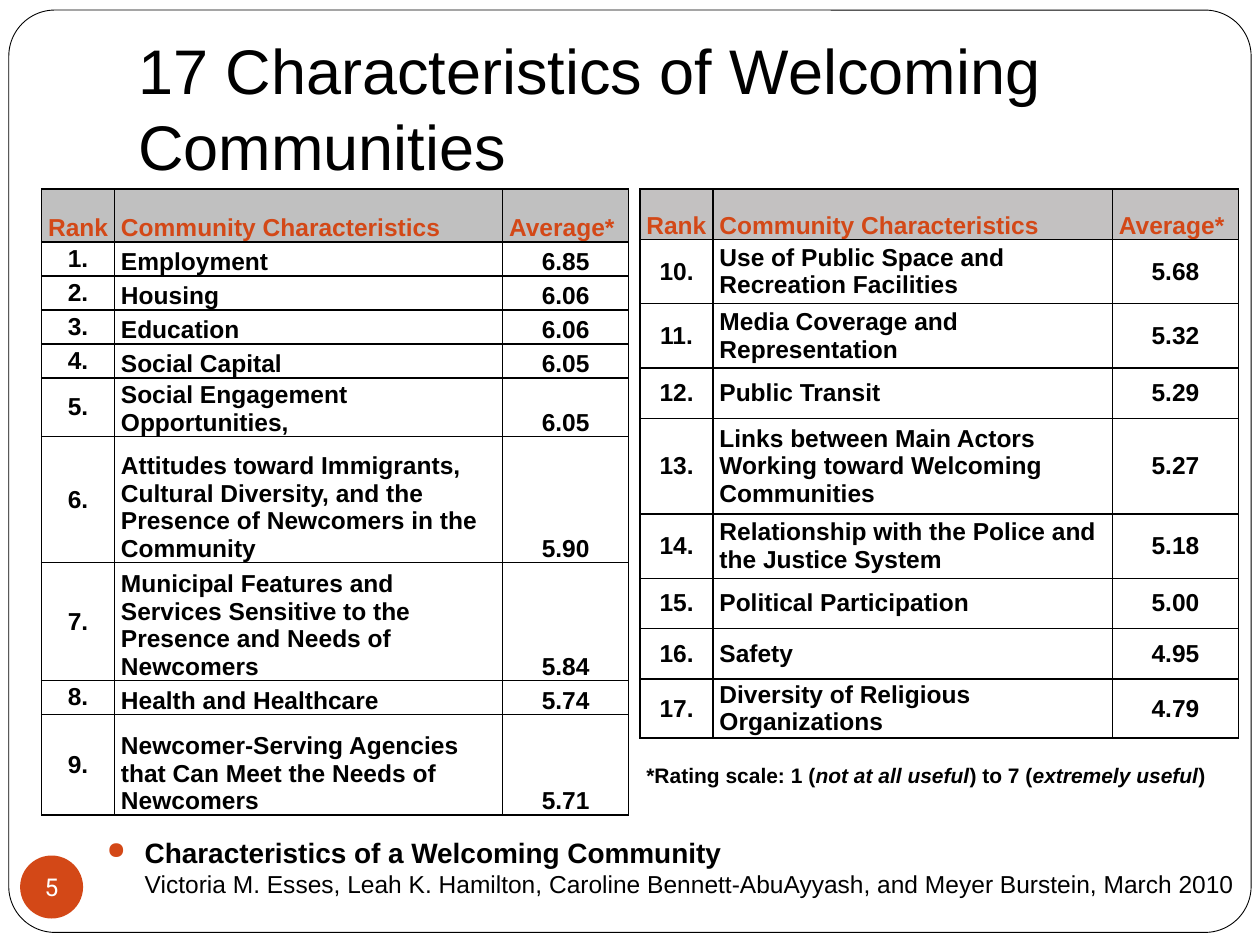
from lxml import etree
from pptx import Presentation
from pptx.dml.color import RGBColor as RGB
from pptx.enum.shapes import MSO_SHAPE as SHAPE
from pptx.enum.text import MSO_ANCHOR as ANCHOR, PP_ALIGN as ALIGN
from pptx.oxml.ns import qn
from pptx.util import Inches, Pt

THEME = {
    "font": "Arial", "number_font": "Roboto",
    "ink": "000000", "accent": "D34817", "paper": "FFFFFF",
    "title": 36, "source": 16, "body": 14, "note": 12,
}
TITLE = "17 Characteristics of Welcoming Communities"
SOURCE = ("Characteristics of a Welcoming Community",
          "Victoria M. Esses, Leah K. Hamilton, Caroline Bennett-AbuAyyash, "
          "and Meyer Burstein, March 2010")
NUMBER = "5"
HEADER = ("Rank", "Community Characteristics", "Average*")
NOTE = [("*Rating scale: 1 (", False), ("not at all useful", True),
        (") to 7 (", False), ("extremely useful", True), (")", False)]

TABLES = [
    {
        "at": (5.08, 1.5), "cols": (0.58, 3.17, 1), "first": 10,
        "head_fill": "C3C1C1", "head_align": ALIGN.LEFT,
        "anchor": ANCHOR.MIDDLE, "head_height": 0.4, "note_height": 0.4,
        "rows": [
            ("Use of Public Space and Recreation Facilities", "5.68", 0.51),
            ("Media Coverage and Representation", "5.32", 0.51),
            ("Public Transit", "5.29", 0.4),
            ("Links between Main Actors Working toward Welcoming Communities", "5.27", 0.76),
            ("Relationship with the Police and the Justice System", "5.18", 0.51),
            ("Political Participation", "5.00", 0.4),
            ("Safety", "4.95", 0.4),
            ("Diversity of Religious Organizations", "4.79", 0.4),
        ],
    },
    {
        "at": (0.33, 1.5), "cols": (0.58, 3.08, 1), "first": 1,
        "head_fill": "C0C0C0", "head_align": ALIGN.CENTER,
        "anchor": ANCHOR.BOTTOM, "head_height": 0.42, "note_height": None,
        "rows": [
            ("Employment", "6.85", 0.27),
            ("Housing", "6.06", 0.27),
            ("Education", "6.06", 0.27),
            ("Social Capital", "6.05", 0.27),
            ("Social Engagement Opportunities,", "6.05", 0.27),
            ("Attitudes toward Immigrants, Cultural Diversity, and the "
             "Presence of Newcomers in the Community", "5.90", 1),
            ("Municipal Features and Services Sensitive to the "
             "Presence and Needs of Newcomers", "5.84", 0.8),
            ("Health and Healthcare", "5.74", 0.27),
            ("Newcomer-Serving Agencies that Can Meet the Needs of Newcomers", "5.71", 0.8),
        ],
    },
]


def set_all(obj, **values):
    for name, value in values.items():
        setattr(obj, name, value)


def add_run(p, text, size="body", color="ink", font="font", **style):
    r = p.add_run()
    r.text = text
    set_all(r.font, size=Pt(THEME[size]), name=THEME[font], **style)
    r.font.color.rgb = RGB.from_string(THEME[color])


def add_shape(s, kind, at, fill):
    sp = s.shapes.add_shape(kind, *map(Inches, at))
    sp.shadow.inherit = False
    sp.fill.solid()
    sp.fill.fore_color.rgb = RGB.from_string(THEME[fill])
    return sp


def add_text(s, at, **frame):
    tf = s.shapes.add_textbox(*map(Inches, at)).text_frame
    set_all(tf, word_wrap=True, **frame)
    return tf.paragraphs[0]


def add_bullet(p):
    pPr = p._p.get_or_add_pPr()
    set_all_xml = {"marL": Inches(0.3), "indent": -Inches(0.3)}
    for name, value in set_all_xml.items():
        pPr.set(name, str(int(value)))
    color = etree.SubElement(pPr, qn("a:buClr"))
    etree.SubElement(color, qn("a:srgbClr"), val=THEME["accent"])
    etree.SubElement(pPr, qn("a:buSzPct"), val="85000")
    etree.SubElement(pPr, qn("a:buChar"), char="●")


def set_borders(cell, sides):
    tcPr = cell._tc.get_or_add_tcPr()
    for i, side in enumerate("LRTB"):
        ln = etree.Element(qn("a:ln" + side), w=str(Pt(1)))
        if side in sides:
            fill = etree.SubElement(ln, qn("a:solidFill"))
            etree.SubElement(fill, qn("a:srgbClr"), val=THEME["ink"])
        else:
            etree.SubElement(ln, qn("a:noFill"))
        tcPr.insert(i, ln)


def format_cell(cell, anchor, align=ALIGN.LEFT, fill=None, sides="LRTB"):
    set_all(cell, vertical_anchor=anchor, margin_left=Inches(0.05),
            margin_right=Inches(0.05), margin_top=0, margin_bottom=0)
    if fill:
        cell.fill.solid()
        cell.fill.fore_color.rgb = RGB.from_string(fill)
    else:
        cell.fill.background()
    set_borders(cell, sides)
    p = cell.text_frame.paragraphs[0]
    p.alignment = align
    return p


def add_ranking(s, data):
    heights = [data["head_height"]] + [row[2] for row in data["rows"]]
    if data["note_height"]:
        heights.append(data["note_height"])
    cols = data["cols"]
    box = (*data["at"], sum(cols), sum(heights))
    table = s.shapes.add_table(len(heights), len(cols), *map(Inches, box)).table
    set_all(table, first_row=False, horz_banding=False)
    for col, width in zip(table.columns, cols):
        col.width = Inches(width)
    for row, height in zip(table.rows, heights):
        row.height = Inches(height)

    head_aligns = (data["head_align"], ALIGN.LEFT, ALIGN.LEFT)
    for c, (text, align) in enumerate(zip(HEADER, head_aligns)):
        p = format_cell(table.cell(0, c), ANCHOR.BOTTOM, align, data["head_fill"])
        add_run(p, text, color="accent", bold=True)

    anchors = (ANCHOR.MIDDLE, data["anchor"], data["anchor"])
    aligns = (ALIGN.CENTER, ALIGN.LEFT, ALIGN.CENTER)
    for i, (name, average, _) in enumerate(data["rows"]):
        texts = (f"{data['first'] + i}.", name, average)
        for c, (text, anchor, align) in enumerate(zip(texts, anchors, aligns)):
            p = format_cell(table.cell(i + 1, c), anchor, align)
            add_run(p, text, bold=True)

    if data["note_height"]:
        last = len(heights) - 1
        for c in range(len(cols)):
            p = format_cell(table.cell(last, c), ANCHOR.BOTTOM, sides="T")
            if c == 0:
                for text, italic in NOTE:
                    add_run(p, text, "note", bold=True, italic=italic)
        table.cell(last, 0).merge(table.cell(last, len(cols) - 1))


def main():
    prs = Presentation()
    set_all(prs, slide_width=Inches(10), slide_height=Inches(7.5))
    s = prs.slides.add_slide(prs.slide_layouts[6])

    frame = add_shape(s, SHAPE.ROUNDED_RECTANGLE, (0.07, 0.08, 9.86, 7.32), "paper")
    frame.adjustments[0] = 0.05
    frame.line.color.rgb = RGB.from_string(THEME["ink"])
    frame.line.width = Pt(0.5)

    p = add_text(s, (1, 0.3, 8.5, 1.25), vertical_anchor=ANCHOR.BOTTOM,
                 margin_bottom=Inches(0.1))
    add_run(p, TITLE, "title")

    p = add_text(s, (0.75, 6.58, 9.25, 0.75))
    p.space_before = Pt(5.8)
    add_bullet(p)
    add_run(p, SOURCE[0], "source", bold=True)
    p.add_line_break()
    add_run(p, SOURCE[1])

    for data in TABLES:
        add_ranking(s, data)

    badge = add_shape(s, SHAPE.OVAL, (0.16, 6.79, 0.5, 0.5), "accent")
    badge.line.fill.background()
    tf = badge.text_frame
    set_all(tf, word_wrap=False, vertical_anchor=ANCHOR.MIDDLE,
            margin_left=0, margin_right=0, margin_top=0, margin_bottom=0)
    p = tf.paragraphs[0]
    p.alignment = ALIGN.CENTER
    add_run(p, NUMBER, color="paper", font="number_font")

    prs.save("out.pptx")


if __name__ == "__main__":
    main()
